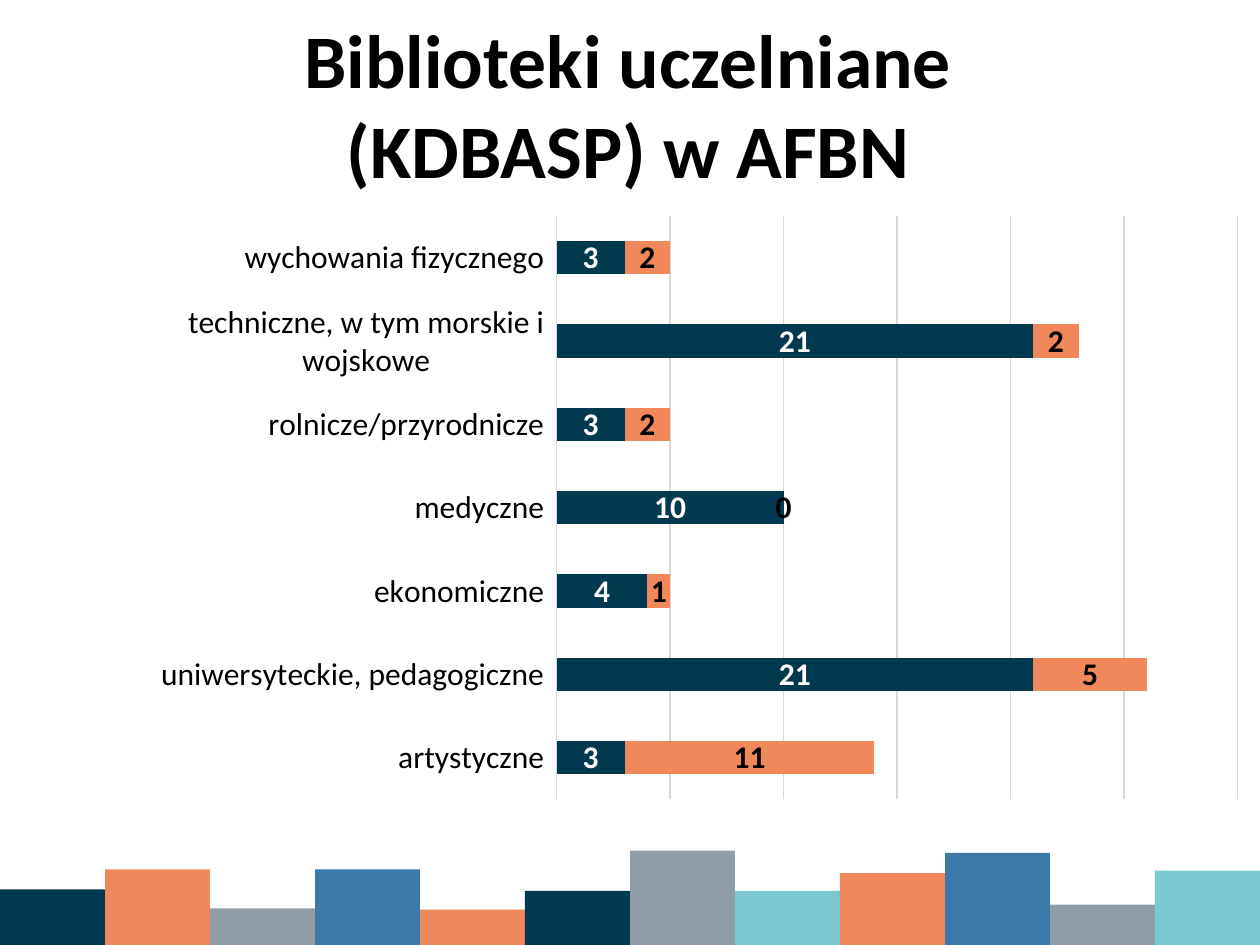
from pptx import Presentation
from pptx.chart.data import CategoryChartData
from pptx.dml.color import RGBColor
from pptx.enum.chart import XL_CHART_TYPE, XL_LABEL_POSITION, XL_TICK_LABEL_POSITION, XL_TICK_MARK
from pptx.enum.shapes import MSO_SHAPE
from pptx.enum.text import MSO_ANCHOR, PP_ALIGN
from pptx.util import Inches, Pt

RECT = MSO_SHAPE.RECTANGLE
BAR_STACKED = XL_CHART_TYPE.BAR_STACKED
LABEL_CENTER = XL_LABEL_POSITION.CENTER
NO_TICKS = XL_TICK_MARK.NONE
LABELS_LOW = XL_TICK_LABEL_POSITION.LOW
MIDDLE = MSO_ANCHOR.MIDDLE
CENTER = PP_ALIGN.CENTER

NAVY = RGBColor(0x01, 0x39, 0x50)
ORANGE = RGBColor(0xF0, 0x88, 0x5C)
GREY = RGBColor(0x90, 0x9D, 0xA6)
BLUE = RGBColor(0x3B, 0x79, 0xA8)
TEAL = RGBColor(0x7A, 0xC9, 0xD0)
BLACK = RGBColor(0, 0, 0)
WHITE = RGBColor(0xFF, 0xFF, 0xFF)
GRID = RGBColor(0xD9, 0xD9, 0xD9)

# Skyline blocks from left to right: height in inches, colour
SKYLINE = [
    (0.44, NAVY), (0.6, ORANGE), (0.29, GREY), (0.6, BLUE),
    (0.28, ORANGE), (0.43, NAVY), (0.75, GREY), (0.43, TEAL),
    (0.57, ORANGE), (0.73, BLUE), (0.32, GREY), (0.59, TEAL),
]

CATEGORIES = [
    "artystyczne", "uniwersyteckie, pedagogiczne", "ekonomiczne", "medyczne",
    "rolnicze/przyrodnicze", "techniczne, w tym morskie i wojskowe",
    "wychowania fizycznego",
]
# Name, values, bar colour, label colour
SERIES = [
    ("Series 1", (3, 21, 4, 10, 3, 21, 3), NAVY, WHITE),
    ("Series 2", (11, 5, 1, 0, 2, 2, 2), ORANGE, BLACK),
]


class Deck:
    """Slide style and the current slide."""
    width, height = Inches(10), Inches(7.5)
    font = "Calibri"

    def __init__(self):
        self.prs = Presentation()
        self.prs.slide_width, self.prs.slide_height = self.width, self.height
        self.s = self.prs.slides.add_slide(self.prs.slide_layouts[6])

    def style(self, font, size, color, bold=False):
        font.name, font.size, font.bold = self.font, Pt(size), bold
        font.color.rgb = color

    def skyline(self, blocks):
        """Equal columns standing on the bottom edge."""
        column = self.width / len(blocks)
        for i, (tall, color) in enumerate(blocks):
            left, right = round(i * column), round((i + 1) * column)
            h = Inches(tall)
            sp = self.s.shapes.add_shape(RECT, left, self.height - h, right - left, h)
            sp.shadow.inherit = False
            sp.fill.solid()
            sp.fill.fore_color.rgb = color
            sp.line.fill.background()

    def title(self, text, x, y, w, h):
        sp = self.s.shapes.add_textbox(Inches(x), Inches(y), Inches(w), Inches(h))
        tf = sp.text_frame
        tf.word_wrap = True
        tf.vertical_anchor = MIDDLE
        tf.text = text
        p = tf.paragraphs[0]
        p.alignment = CENTER
        self.style(p.runs[0].font, 43.2, BLACK, True)

    def stacked_bars(self, categories, series, x, y, w, h):
        data = CategoryChartData(number_format="0")
        data.categories = categories
        for name, values, _, _ in series:
            data.add_series(name, values)
        chart = self.s.shapes.add_chart(
            BAR_STACKED, Inches(x), Inches(y), Inches(w), Inches(h), data).chart
        self.style(chart.font, 10, BLACK)
        chart.has_legend = False
        chart.has_title = False

        # Bars and their values
        plot = chart.plots[0]
        plot.gap_width, plot.overlap = 150, 100
        plot.vary_by_categories = False
        for ser, (_, _, color, label_color) in zip(plot.series, series):
            ser.format.fill.solid()
            ser.format.fill.fore_color.rgb = color
            labels = ser.data_labels
            labels.show_value = True
            labels.position = LABEL_CENTER
            self.style(labels.font, 18, label_color, True)

        # Axes and grid
        cat, val = chart.category_axis, chart.value_axis
        cat.major_tick_mark = cat.minor_tick_mark = NO_TICKS
        cat.tick_label_position = LABELS_LOW
        self.style(cat.tick_labels.font, 18, BLACK)
        val.visible = False
        val.minimum_scale, val.maximum_scale, val.major_unit = 0, 30, 5
        val.has_major_gridlines = True
        for line in (cat.format.line, val.major_gridlines.format.line):
            line.color.rgb = GRID
            line.width = Pt(0.75)


def main():
    deck = Deck()
    deck.skyline(SKYLINE)
    deck.title("Biblioteki uczelniane (KDBASP) w AFBN", 1.66, 0.23, 6.65, 1.18)
    deck.stacked_bars(CATEGORIES, SERIES, 1.1, 1.62, 8.9, 4.82)
    deck.prs.save("out.pptx")


if __name__ == "__main__":
    main()
